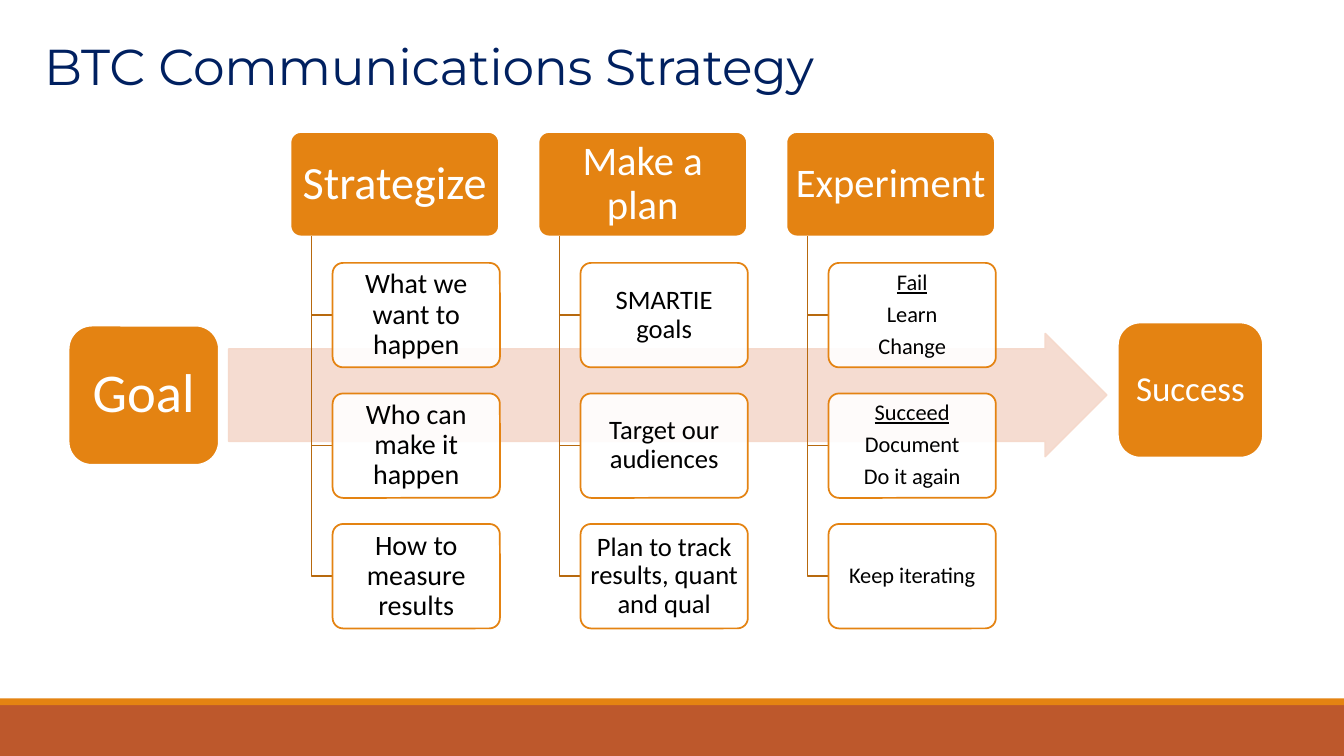
from pptx import Presentation
from pptx.dml.color import RGBColor
from pptx.enum.shapes import MSO_SHAPE
from pptx.enum.text import MSO_ANCHOR, PP_ALIGN
from pptx.oxml.ns import qn
from pptx.util import Pt
from lxml import etree

TITLE = "BTC Communications Strategy"
STAGES = [
    ("Strategize", 33, 5, 20, 3, [
        ["What we want to happen"],
        ["Who can make it happen"],
        ["How to measure results"]]),
    ("Make a plan", 29, 4.3, 19, 3, [
        ["SMARTIE goals"],
        ["Target our audiences"],
        ["Plan to track results, quant and qual"]]),
    ("Experiment", 29, 4.3, 16, 2.2, [
        ["Fail", "Learn", "Change"],
        ["Succeed", "Document", "Do it again"],
        ["Keep iterating"]]),
]
ENDS = [
    ("Goal", 39, 11.5, (49, 232.6, 107.3, 99.4)),
    ("Success", 25, 7.2, (798.5, 230.4, 103.7, 96.5)),
]
COLORS = {"orange": "E48312", "rust": "BD582C", "pink": "F5D9CC",
          "rail": "B7690E", "navy": "002060", "white": "FFFFFF",
          "black": "000000"}
BODY, HEAD = "Calibri", "Montserrat"
RECT, ROUND, ARROW = MSO_SHAPE.RECTANGLE, MSO_SHAPE.ROUNDED_RECTANGLE, MSO_SHAPE.RIGHT_ARROW
MIDDLE, BOTTOM, CENTER = MSO_ANCHOR.MIDDLE, MSO_ANCHOR.BOTTOM, PP_ALIGN.CENTER

LEFT, TOP, PITCH = 207.5, 94.3, 177.12
HEAD_W, BOX_W, BOX_H = 149, 119.5, 74.6
RAIL_X, BOX_X = 15, 30.1
FIRST, STEP = 187.8, 93.25


def rgb(name):
    """Return the colour of that name."""
    return RGBColor.from_string(COLORS[name])


def fade(fill):
    """Make a solid fill ninety percent opaque."""
    for tint in fill.fore_color._xFill.iter(qn("a:srgbClr")):
        etree.SubElement(tint, qn("a:alpha")).set("val", "90000")


def add_box(slide, kind, box, fill, line=None, adjust=(), clear=False):
    """Add a filled preset shape."""
    shape = slide.shapes.add_shape(kind, *map(Pt, box))
    shape.shadow.inherit = False
    for i, value in enumerate(adjust):
        shape.adjustments[i] = value
    shape.fill.solid()
    shape.fill.fore_color.rgb = rgb(fill)
    if line:
        shape.line.color.rgb = rgb(line)
        shape.line.width = Pt(1.25)
    else:
        shape.line.fill.background()
    if clear:
        fade(shape.fill)
    return shape


def add_text(shape, lines, size, color, inset):
    """Write centred lines, underlining the first of several."""
    frame = shape.text_frame
    frame.word_wrap = True
    frame.vertical_anchor = MIDDLE
    frame.margin_left = frame.margin_right = Pt(inset)
    frame.margin_top = frame.margin_bottom = Pt(round(inset * 0.66, 2))
    for i, line in enumerate(lines):
        para = frame.add_paragraph() if i else frame.paragraphs[0]
        para.alignment = CENTER
        para.line_spacing = 0.9
        para.space_after = Pt(0.35 * size)
        run = para.add_run()
        run.text = line
        run.font.name = BODY
        run.font.size = Pt(size)
        run.font.color.rgb = rgb(color)
        run.font.underline = len(lines) > 1 and i == 0


def add_rail(slide, x, end, y):
    """Draw the elbow from a stage down to one of its boxes."""
    start = TOP + BOX_H
    path = slide.shapes.build_freeform(Pt(x), Pt(start))
    path.add_line_segments([(Pt(x), Pt(y)), (Pt(end), Pt(y))], close=False)
    rail = path.convert_to_shape()
    rail.shadow.inherit = False
    rail.fill.background()
    rail.line.color.rgb = rgb("rail")
    rail.line.width = Pt(1.25)


def add_title(slide):
    """Write the slide title."""
    frame = slide.shapes.add_textbox(Pt(15), Pt(19.5), Pt(875), Pt(49)).text_frame
    frame.word_wrap = True
    frame.vertical_anchor = BOTTOM
    frame.margin_left, frame.margin_top = Pt(16.5), Pt(5)
    frame.margin_right = frame.margin_bottom = 0
    run = frame.paragraphs[0].add_run()
    run.text = TITLE
    run.font.name = HEAD
    run.font.size = Pt(36)
    run.font.color.rgb = rgb("navy")
    run.font._element.set("spc", "-20")


def add_stage(slide, x, stage):
    """Add one stage with its rails and boxes."""
    name, size, inset, small, pad, items = stage
    head = add_box(slide, ROUND, (x, TOP, HEAD_W, BOX_H), "orange", "white", [0.1])
    add_text(head, [name], size, "white", inset)
    for i, lines in enumerate(items):
        y = FIRST + i * STEP
        add_rail(slide, x + RAIL_X, x + BOX_X, y + BOX_H / 2)
        box = add_box(slide, ROUND, (x + BOX_X, y, BOX_W, BOX_H),
                      "white", "orange", [0.1], True)
        add_text(box, lines, small, "black", pad)


def main():
    """Build the slide and save it."""
    deck = Presentation()
    deck.slide_width, deck.slide_height = Pt(960), Pt(540)
    slide = deck.slides.add_slide(deck.slide_layouts[6])
    add_box(slide, RECT, (0, 501, 960, 39), "rust")
    add_box(slide, RECT, (0, 498.8, 960, 5), "orange")
    add_box(slide, ARROW, (163.4, 238.3, 627.1, 87.8), "pink", "pink", [0.75, 0.5], True)
    add_title(slide)
    for i, stage in enumerate(STAGES):
        add_stage(slide, LEFT + i * PITCH, stage)
    for name, size, inset, box in ENDS:
        add_text(add_box(slide, ROUND, box, "orange", "white"), [name], size, "white", inset)
    deck.save("out.pptx")


if __name__ == "__main__":
    main()
